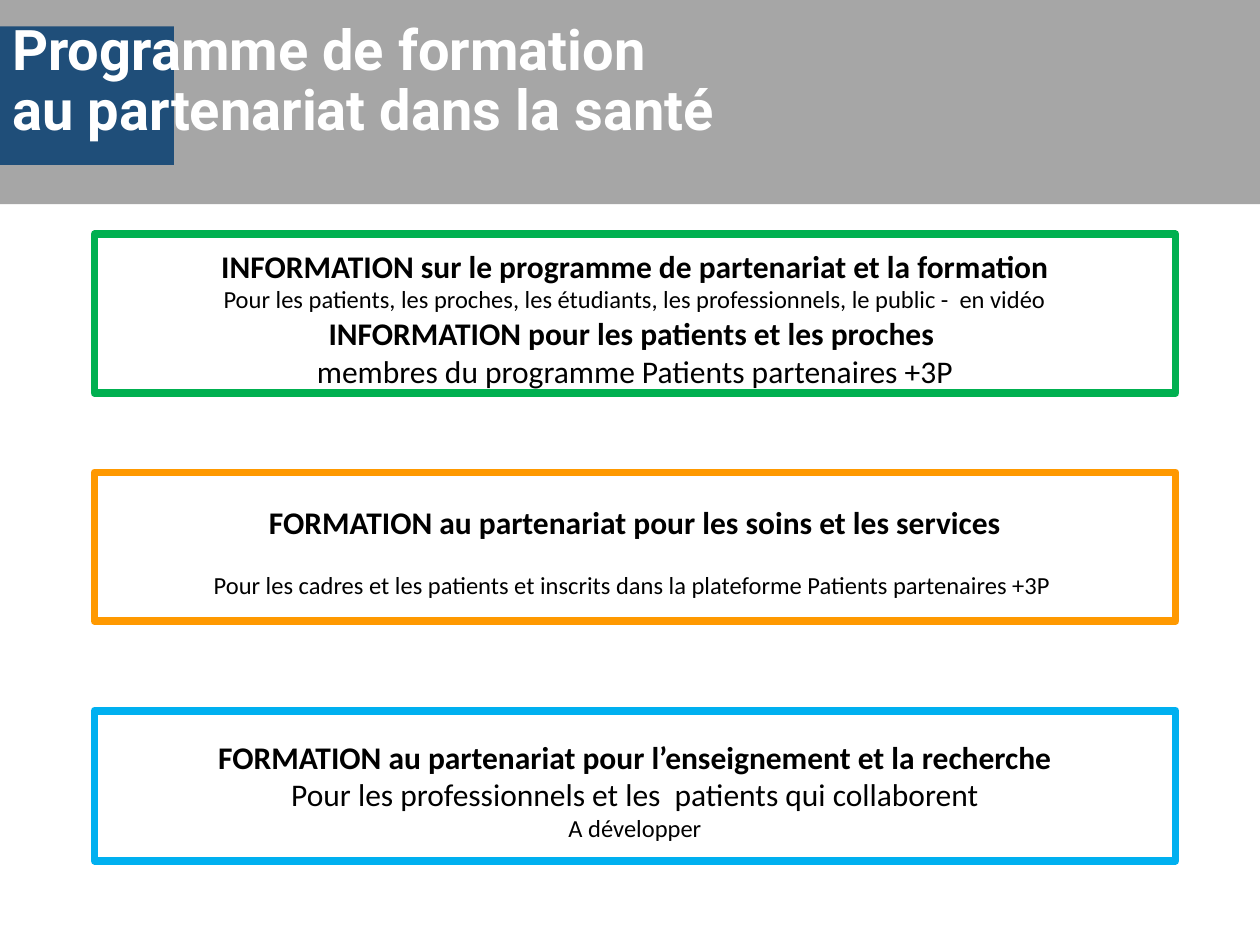
from pptx import Presentation
from pptx import util as u
from pptx.dml.color import RGBColor
from pptx.enum import shapes, text

# Content
TITLE = "Programme de formation \vau partenariat dans la santé"
HEADING = dict(size=18, bold=True)
BODY = dict(size=18)
NOTE = dict(size=14)
# Each panel: border colour, height, lines with their format
PANELS = [
    ("green", 1.26, [
        ("INFORMATION sur le programme de partenariat et la formation", HEADING),
        ("Pour les patients, les proches, les étudiants, les professionnels, "
         "le public -  en vidéo", NOTE),
        ("INFORMATION pour les patients et les proches ", HEADING),
        ("membres du programme Patients partenaires +3P", BODY),
    ]),
    ("orange", 1.18, [
        ("FORMATION au partenariat pour les soins et les services", HEADING),
        ("Pour les cadres et les patients et inscrits dans la plateforme "
         "Patients partenaires +3P ", dict(NOTE, before=17)),
    ]),
    ("sky", 1.19, [
        ("FORMATION au partenariat pour l’enseignement et la recherche", HEADING),
        ("Pour les professionnels et les  patients qui collaborent", BODY),
        ("A développer", NOTE),
    ]),
]
COLORS = {"grey": "A6A6A6", "navy": "1F4E79", "white": "FFFFFF", "black": "000000",
          "green": "00B050", "orange": "FF9900", "sky": "00B0F0"}

# Layout in inches
WIDTH, HEIGHT = 10, 7.5
PANEL_LEFT, PANEL_WIDTH = 0.75, 8.58
FIRST_TOP, PITCH = 1.86, 1.89


def color(name):
    return RGBColor.from_string(COLORS[name])


def add_box(page, area, fill=None, line=None):
    box = page.shapes.add_shape(shapes.MSO_SHAPE.RECTANGLE, *map(u.Inches, area))
    box.shadow.inherit = False
    if fill:
        box.fill.solid()
        box.fill.fore_color.rgb = color(fill)
    else:
        box.fill.background()
    if line:
        box.line.color.rgb = color(line)
        box.line.width = u.Pt(4.5)
    else:
        box.line.fill.background()
    return box


def write(para, words, size, bold=False, font="Calibri", ink="black",
          align=text.PP_ALIGN.CENTER, before=0, spacing=1.0):
    para.text = words
    para.alignment = align
    para.space_before = u.Pt(before)
    para.line_spacing = spacing
    for span in para.runs:
        span.font.name = font
        span.font.size = u.Pt(size)
        span.font.bold = bold
        span.font.color.rgb = color(ink)


deck = Presentation()
deck.slide_width, deck.slide_height = u.Inches(WIDTH), u.Inches(HEIGHT)
page = deck.slides.add_slide(deck.slide_layouts[6])

# Header band, accent block and title
add_box(page, (0, 0, WIDTH, 1.62), fill="grey")
add_box(page, (-0.04, 0.21, 1.42, 1.1), fill="navy")
title = page.shapes.add_textbox(*map(u.Inches, (0, 0.03, 9, 1.25))).text_frame
title.word_wrap = True
title.vertical_anchor = text.MSO_ANCHOR.MIDDLE
write(title.paragraphs[0], TITLE, size=32, bold=True, font="Roboto", ink="white",
      align=text.PP_ALIGN.LEFT, spacing=0.9)

# Panels, evenly pitched; the top inset sets text slightly below the middle
for row, (border, height, lines) in enumerate(PANELS):
    area = (PANEL_LEFT, FIRST_TOP + row * PITCH, PANEL_WIDTH, height)
    frame = add_box(page, area, line=border).text_frame
    frame.word_wrap = True
    frame.vertical_anchor = text.MSO_ANCHOR.MIDDLE
    frame.margin_top, frame.margin_bottom = u.Inches(0.07), 0
    for index, (words, style) in enumerate(lines):
        para = frame.add_paragraph() if index else frame.paragraphs[0]
        write(para, words, **style)

deck.save("out.pptx")
